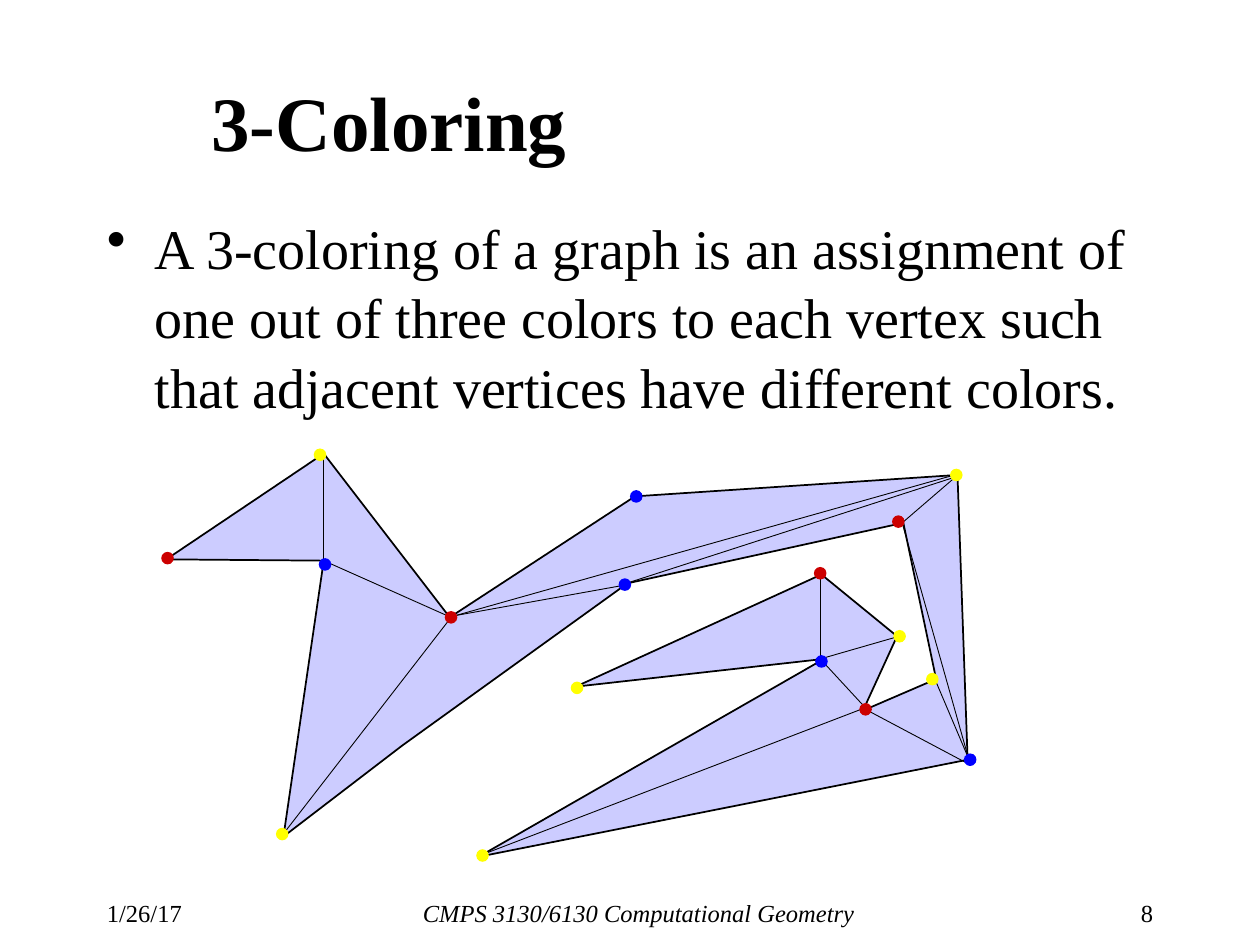
from dataclasses import dataclass

from lxml.etree import SubElement
from pptx import Presentation
from pptx.dml.color import RGBColor as Color
from pptx.enum.shapes import MSO_CONNECTOR as Connector, MSO_SHAPE as Preset
from pptx.enum.text import MSO_ANCHOR as Anchor, PP_ALIGN as Align
from pptx.oxml.ns import qn
from pptx.util import Inches, Pt


@dataclass(frozen=True)
class Theme:
    font: str = "Times New Roman"
    ink: Color = Color(0x00, 0x00, 0x00)
    polygon: Color = Color(0xCC, 0xCC, 0xFF)
    red: Color = Color(0xCC, 0x00, 0x00)
    blue: Color = Color(0x00, 0x00, 0xFF)
    yellow: Color = Color(0xFF, 0xFF, 0x00)
    title_size: Pt = Pt(44)
    body_size: Pt = Pt(32)
    footer_size: Pt = Pt(14)
    outline_width: Pt = Pt(1)
    diagonal_width: Pt = Pt(0.5)


theme = Theme()
deck = Presentation()
deck.slide_width, deck.slide_height = Inches(10), Inches(7.5)
page = deck.slides.add_slide(deck.slide_layouts[6])


def add_text(text, bounds, size, align=Align.LEFT, bold=False, italic=False):
    box = page.shapes.add_textbox(*[Inches(length) for length in bounds])
    box.text_frame.word_wrap = True
    box.text_frame.text = text
    para = box.text_frame.paragraphs[0]
    para.alignment = align
    font = para.runs[0].font
    font.name, font.size = theme.font, size
    font.bold, font.italic = bold, italic
    font.color.rgb = theme.ink
    return box


add_text("1/26/17", (0.75, 7.08, 0.95, 0.25), theme.footer_size)
add_text("CMPS 3130/6130 Computational Geometry", (1.9, 7.08, 6.34, 0.25),
         theme.footer_size, Align.CENTER, italic=True)
add_text("8", (8.43, 7.08, 0.82, 0.25), theme.footer_size, Align.RIGHT)

title = add_text("3-Coloring", (1.58, 0.33, 8.25, 1.25), theme.title_size, bold=True)
title.text_frame.vertical_anchor = Anchor.MIDDLE

body = add_text(
    "A 3-coloring of a graph is an assignment of one out of three colors to each "
    "vertex such that adjacent vertices have different colors.",
    (0.75, 1.62, 8.5, 1.82), theme.body_size)
para = body.text_frame.paragraphs[0]
para.line_spacing = 1.04
para.space_before = Pt(6.4)
bullet_format = para._p.get_or_add_pPr()
bullet_format.set("marL", str(Inches(0.38)))
bullet_format.set("indent", str(Inches(-0.38)))
SubElement(bullet_format, qn("a:buChar")).set("char", "•")

outline = [
    (1.32, 4.44), (2.57, 3.6), (3.57, 4.9), (5.04, 3.94), (7.6, 3.77), (7.68, 6.03),
    (3.8, 6.8), (6.54, 5.23), (4.57, 5.45), (6.52, 4.56), (7.12, 5.05), (6.85, 5.64),
    (7.43, 5.39), (7.17, 4.15), (4.98, 4.63), (3.19, 5.92), (2.25, 6.64), (2.57, 4.45),
]
corners = [(Inches(x), Inches(y)) for x, y in outline]
builder = page.shapes.build_freeform(*corners[0])
builder.add_line_segments(corners[1:], close=True)
polygon = builder.convert_to_shape()
polygon.shadow.inherit = False
polygon.fill.solid()
polygon.fill.fore_color.rgb = theme.polygon
polygon.line.color.rgb = theme.ink
polygon.line.width = theme.outline_width

diagonals = [
    (2.57, 3.59, 2.57, 4.45), (2.57, 4.45, 3.58, 4.9), (3.58, 4.9, 2.24, 6.63),
    (3.59, 4.89, 4.98, 4.64), (3.6, 4.89, 7.61, 3.76), (4.94, 4.64, 7.6, 3.78),
    (7.16, 4.15, 7.59, 3.78), (7.16, 4.15, 7.69, 6.03), (7.42, 5.39, 7.7, 6.05),
    (6.85, 5.62, 7.68, 6.06), (6.86, 5.62, 3.81, 6.79), (6.52, 5.24, 6.88, 5.63),
    (6.51, 5.23, 7.1, 5.06), (6.51, 4.57, 6.51, 5.24),
]
for ends in diagonals:
    diagonal = page.shapes.add_connector(
        Connector.STRAIGHT, *[Inches(length) for length in ends])
    diagonal.line.color.rgb = theme.ink
    diagonal.line.width = theme.diagonal_width
    SubElement(diagonal._element.spPr, qn("a:effectLst"))

vertex_size = Inches(0.1)
vertex_classes = {
    theme.red: [(1.28, 4.38), (6.82, 5.58), (6.46, 4.5), (3.53, 4.85), (7.08, 4.09)],
    theme.blue: [(2.53, 4.43), (5, 3.89), (4.91, 4.59), (7.65, 5.98), (6.47, 5.2)],
    theme.yellow: [(2.49, 3.56), (2.19, 6.57), (7.54, 3.72), (7.35, 5.34),
                   (3.78, 6.74), (7.09, 5), (4.53, 5.41)],
}
for color, positions in vertex_classes.items():
    for left, top in positions:
        vertex = page.shapes.add_shape(
            Preset.OVAL, Inches(left), Inches(top), vertex_size, vertex_size)
        vertex.shadow.inherit = False
        vertex.fill.solid()
        vertex.fill.fore_color.rgb = color
        vertex.line.fill.background()

deck.save("out.pptx")
